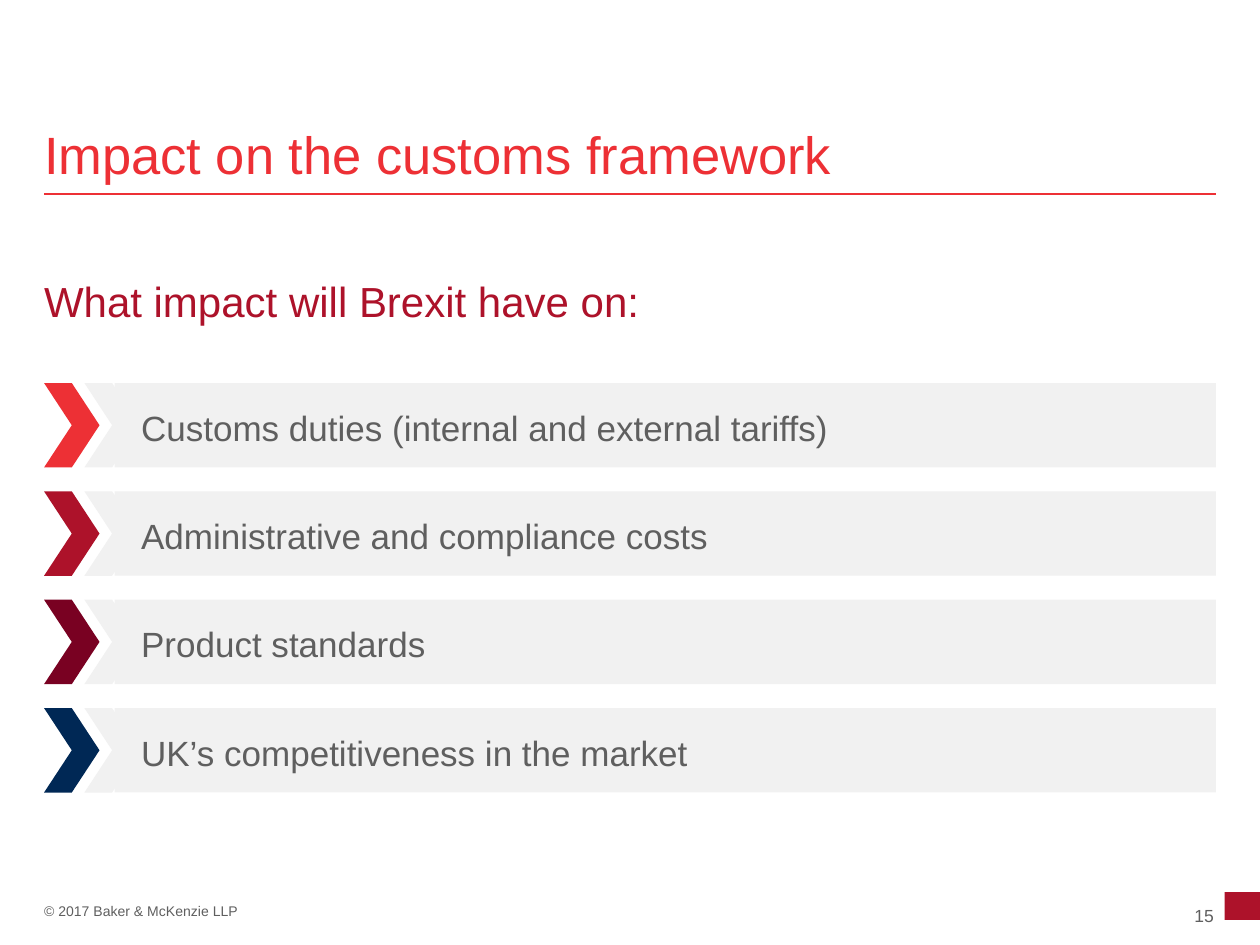
from lxml import etree
from pptx import Presentation
from pptx.dml.color import RGBColor
from pptx.enum import shapes, text
from pptx.oxml.ns import qn
from pptx.util import Inches, Pt

RED = RGBColor(0xED, 0x30, 0x35)
CRIMSON = RGBColor(0xAD, 0x12, 0x2A)
BURGUNDY = RGBColor(0x79, 0x01, 0x22)
NAVY = RGBColor(0x00, 0x28, 0x55)
PALE = RGBColor(0xF1, 0xF1, 0xF1)
GREY = RGBColor(0x5F, 0x5F, 0x5F)

LEFT, RIGHT = 0.35, 9.65
IMPACTS = [
    ("Customs duties (internal and external tariffs)", RED),
    ("Administrative and compliance costs", CRIMSON),
    ("Product standards", BURGUNDY),
    ("UK’s competitiveness in the market", NAVY),
]


def write(frame, words, size, color, spacing):
    frame.margin_left = frame.margin_right = 0
    frame.margin_top = frame.margin_bottom = 0
    frame.word_wrap = True
    paragraph = frame.paragraphs[0]
    paragraph.alignment = text.PP_ALIGN.LEFT
    paragraph.line_spacing = spacing
    run = paragraph.add_run()
    run.text = words
    run.font.name = "Arial"
    run.font.size = Pt(size)
    run.font.color.rgb = color


def add_label(slide, left, top, width, height, words, size, color, spacing):
    label = slide.shapes.add_textbox(
        Inches(left), Inches(top), Inches(width), Inches(height))
    write(label.text_frame, words, size, color, spacing)


def add_block(slide, preset, left, top, width, height, color):
    block = slide.shapes.add_shape(
        preset, Inches(left), Inches(top), Inches(width), Inches(height))
    block.shadow.inherit = False
    block.fill.solid()
    block.fill.fore_color.rgb = color
    block.line.fill.background()
    return block


def add_heading(slide, left, top, width):
    # Title, rule below it, and the lead-in question
    add_label(slide, left, top, width, 0.44,
              "Impact on the customs framework", 30, RED, 1.06)
    rule = slide.shapes.add_connector(
        shapes.MSO_CONNECTOR.STRAIGHT, Inches(left), Inches(top + 0.6),
        Inches(left + width), Inches(top + 0.6))
    rule.line.color.rgb = RED
    rule.line.width = Pt(1)
    etree.SubElement(rule._element.spPr, qn("a:effectLst"))
    add_label(slide, left, top + 1.22, width, 0.36,
              "What impact will Brexit have on:", 24, CRIMSON, 1.06)


def add_impact(slide, left, top, width, height, words, color):
    chevron = shapes.MSO_SHAPE.CHEVRON
    chevron_width, chevron_step, bar_inset = 0.44, 0.32, 0.56
    # Pale chevron flows into the bar; the coloured one leads
    add_block(slide, chevron, left + chevron_step, top,
              chevron_width, height, PALE)
    bar = add_block(slide, shapes.MSO_SHAPE.RECTANGLE, left + bar_inset, top,
                    width - bar_inset, height, PALE)
    add_block(slide, chevron, left, top, chevron_width, height, color)

    write(bar.text_frame, words, 20, GREY, 0.96)
    bar.text_frame.margin_left = Inches(0.21)
    bar.text_frame.margin_top = Inches(0.06)
    bar.text_frame.vertical_anchor = text.MSO_ANCHOR.MIDDLE


def add_impacts(slide, left, top, width, pitch):
    for row, (words, color) in enumerate(IMPACTS):
        add_impact(slide, left, top + row * pitch, width, 0.67, words, color)


def add_footer(slide, left, top):
    add_label(slide, left, top + 0.09, 2, 0.14,
              "© 2017 Baker & McKenzie LLP", 8, GREY, 0.96)
    add_label(slide, 9.48, top + 0.08, 0.2, 0.17, "15", 10, GREY, 1.12)
    add_block(slide, shapes.MSO_SHAPE.RECTANGLE, 9.72, top, 0.28, 0.22, CRIMSON)


def main():
    deck = Presentation()
    deck.slide_width, deck.slide_height = Inches(10), Inches(7.5)
    slide = deck.slides.add_slide(deck.slide_layouts[6])
    add_heading(slide, LEFT, 0.94, RIGHT - LEFT)
    add_impacts(slide, LEFT, 3.04, RIGHT - LEFT, 0.86)
    add_footer(slide, LEFT, 7.08)
    deck.save("out.pptx")


if __name__ == "__main__":
    main()
